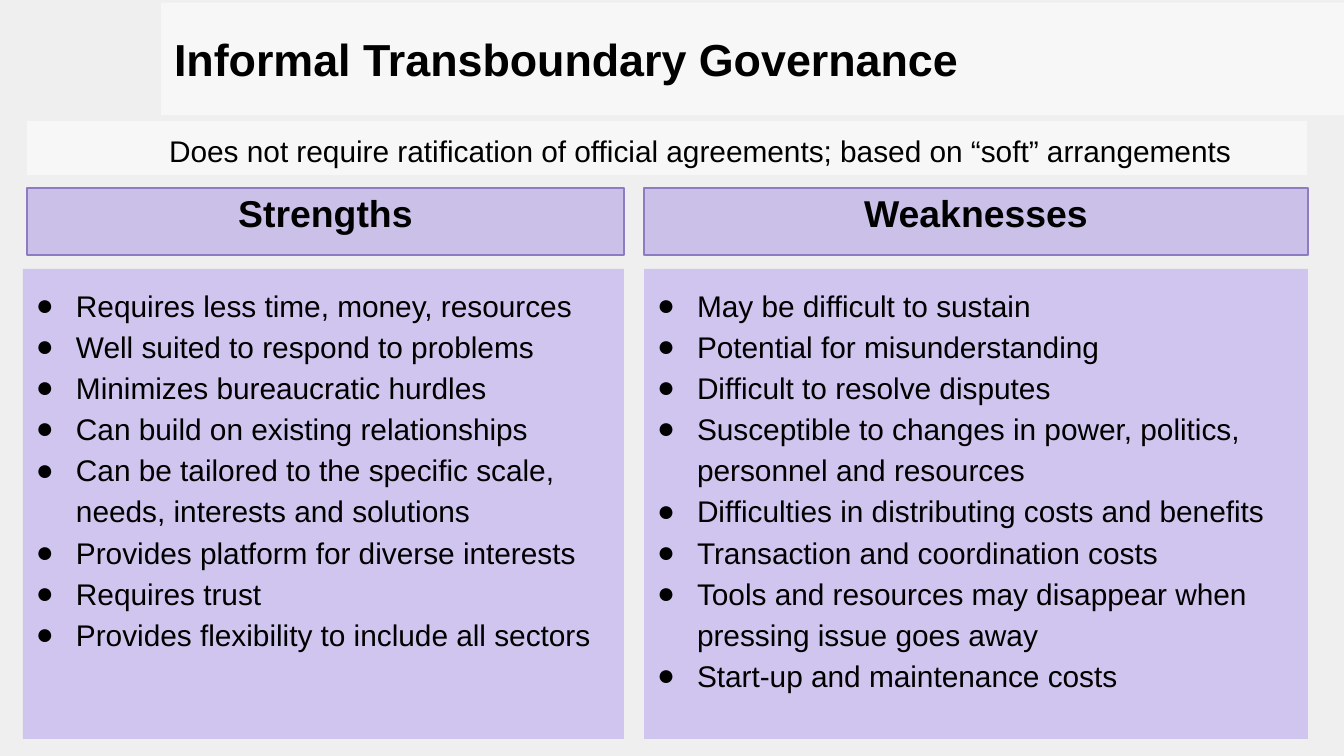
import pptx
import pptx.util
import pptx.dml.color
import pptx.enum.shapes
import pptx.enum.text
import pptx.oxml
import pptx.oxml.ns
from dataclasses import dataclass
from lxml import etree

EMU_PER_PX = 914400 / 134.4
ALIGN = pptx.enum.text.PP_ALIGN
ANCHOR = pptx.enum.text.MSO_ANCHOR


@dataclass(frozen=True)
class Theme:
    font: str = "Arial"
    background: str = "EFEFEF"
    text: str = "000000"
    band: str = "FFFFFF"
    heading: str = "C0B2E5"
    heading_line: str = "8E7CC3"
    panel: str = "C7B8EE"
    title_size: int = 24
    heading_size: int = 20
    body_size: int = 16


def px(length):
    return pptx.util.Emu(round(length * EMU_PER_PX))


def rgb(value):
    return pptx.dml.color.RGBColor.from_string(value)


class GovernanceSlide:
    def __init__(self, presentation, theme):
        self.theme = theme
        self.slide = presentation.slides.add_slide(presentation.slide_layouts[5])
        background = self.slide.background.fill
        background.solid()
        background.fore_color.rgb = rgb(theme.background)

    def paint(self, shape, color, opacity):
        shape.fill.solid()
        shape.fill.fore_color.rgb = rgb(color)
        color_node = shape._element.spPr.find(
            pptx.oxml.ns.qn("a:solidFill") + "/" + pptx.oxml.ns.qn("a:srgbClr"))
        alpha = etree.SubElement(color_node, pptx.oxml.ns.qn("a:alpha"))
        alpha.set("val", str(opacity * 1000))

    def set_frame(self, shape, anchor, inset_x=13, inset_y=13):
        frame = shape.text_frame
        frame.word_wrap = True
        frame.vertical_anchor = anchor
        frame.margin_left = frame.margin_right = px(inset_x)
        frame.margin_top = frame.margin_bottom = px(inset_y)
        return frame

    def add_text(self, paragraph, text, size, align, spacing=1.0, bold=False):
        paragraph.alignment = align
        paragraph.line_spacing = spacing
        run = paragraph.add_run()
        run.text = text
        run.font.name = self.theme.font
        run.font.size = pptx.util.Pt(size)
        run.font.bold = bold
        run.font.color.rgb = rgb(self.theme.text)

    def indent(self, paragraph, left, first_line=0):
        properties = paragraph._p.get_or_add_pPr()
        properties.set("marL", str(px(left)))
        properties.set("indent", str(px(first_line)))
        return properties

    def bullet(self, paragraph):
        properties = self.indent(paragraph, 40, -40)
        color = etree.SubElement(properties, pptx.oxml.ns.qn("a:buClr"))
        etree.SubElement(color, pptx.oxml.ns.qn("a:srgbClr")).set("val", self.theme.text)
        etree.SubElement(properties, pptx.oxml.ns.qn("a:buFont")).set("typeface", self.theme.font)
        etree.SubElement(properties, pptx.oxml.ns.qn("a:buChar")).set("char", "●")

    def rectangle(self, left, top, width, height, color, opacity, line=None):
        shape = self.slide.shapes.add_shape(
            pptx.enum.shapes.MSO_SHAPE.RECTANGLE, px(left), px(top), px(width), px(height))
        shape.shadow.inherit = False
        self.paint(shape, color, opacity)
        if line:
            shape.line.color.rgb = rgb(line)
            shape.line.width = pptx.util.Pt(0.75)
        else:
            shape.line.fill.background()
        return shape

    def title(self, text, left, top, width, height):
        title = self.slide.shapes.title
        title.left, title.top = px(left), px(top)
        title.width, title.height = px(width), px(height)
        self.paint(title, self.theme.band, 55)
        frame = self.set_frame(title, ANCHOR.MIDDLE, inset_y=7)
        frame.auto_size = pptx.enum.text.MSO_AUTO_SIZE.SHAPE_TO_FIT_TEXT
        self.add_text(frame.paragraphs[0], text, self.theme.title_size, ALIGN.LEFT, bold=True)

    def summary(self, text, left, top, width, height):
        band = self.rectangle(left, top, width, height, self.theme.band, 54)
        paragraph = self.set_frame(band, ANCHOR.MIDDLE).paragraphs[0]
        self.indent(paragraph, 67)
        self.add_text(paragraph, text, self.theme.body_size, ALIGN.CENTER, 1.15)

    def heading(self, text, left, top, width, height):
        box = self.rectangle(left, top, width, height, self.theme.heading, 76,
                             self.theme.heading_line)
        frame = self.set_frame(box, ANCHOR.TOP, inset_y=7)
        self.add_text(frame.paragraphs[0], text, self.theme.heading_size, ALIGN.CENTER, 0.9, True)

    def panel(self, points, left, top, width, height):
        box = self.rectangle(left, top, width, height, self.theme.panel, 76)
        frame = self.set_frame(box, ANCHOR.TOP)
        for index, point in enumerate(points):
            paragraph = frame.add_paragraph() if index else frame.paragraphs[0]
            self.bullet(paragraph)
            self.add_text(paragraph, point, self.theme.body_size, ALIGN.LEFT, 1.15)


STRENGTHS = [
    "Requires less time, money, resources",
    "Well suited to respond to problems",
    "Minimizes bureaucratic hurdles",
    "Can build on existing relationships",
    "Can be tailored to the specific scale, needs, interests and solutions",
    "Provides platform for diverse interests",
    "Requires trust",
    "Provides flexibility to include all sectors",
]
WEAKNESSES = [
    "May be difficult to sustain",
    "Potential for misunderstanding",
    "Difficult to resolve disputes",
    "Susceptible to changes in power, politics, personnel and resources",
    "Difficulties in distributing costs and benefits",
    "Transaction and coordination costs",
    "Tools and resources may disappear when pressing issue goes away",
    "Start-up and maintenance costs",
]


def main():
    presentation = pptx.Presentation()
    presentation.slide_width, presentation.slide_height = px(1344), px(756)
    governance = GovernanceSlide(presentation, Theme())

    # Title and summary bands
    governance.title("Informal Transboundary Governance", 161, 25, 1183, 68)
    governance.summary(
        "Does not require ratification of official agreements; based on “soft” arrangements",
        27, 121, 1280, 54)

    # Strengths and weaknesses columns: heading above its panel
    columns = [
        ("Strengths", STRENGTHS, 27, 23, 624),
        ("Weaknesses", WEAKNESSES, 644, 644, 1308),
    ]
    for name, points, heading_left, panel_left, right in columns:
        governance.panel(points, panel_left, 269, right - panel_left, 470)
        governance.heading(name, heading_left, 188, right - heading_left, 67)

    presentation.save("out.pptx")


if __name__ == "__main__":
    main()
